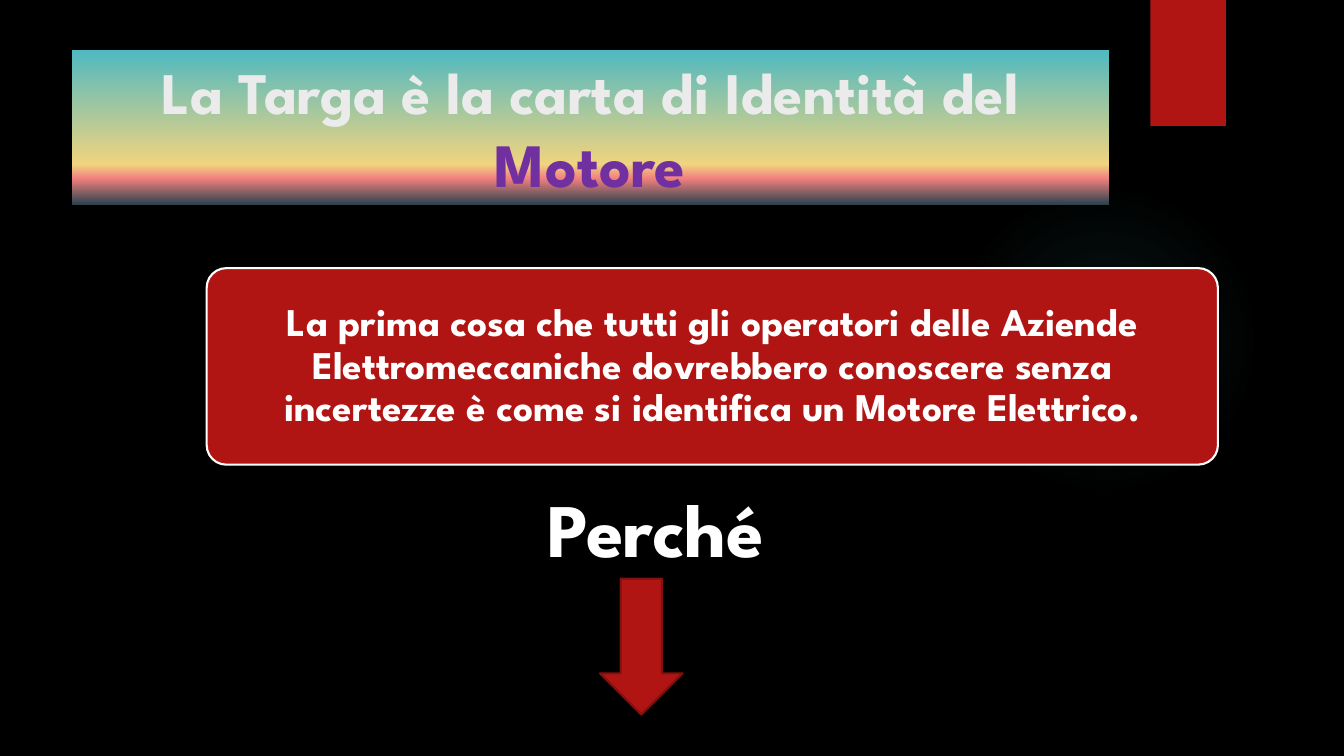
import lxml.etree
import pptx
import pptx.dml.color
import pptx.enum.shapes
import pptx.enum.text
import pptx.oxml.ns
import pptx.util

Inches = pptx.util.Inches
SHAPES = pptx.enum.shapes.MSO_SHAPE
ANCHORS = pptx.enum.text.MSO_ANCHOR
FONT = "League Spartan"
COLOURS = {
    "background": "000000", "red": "B01513", "dark red": "82100E",
    "white": "FFFFFF", "pale": "EBEBEB", "purple": "7030A0",
    "teal": "50B9C1", "yellow": "F0D47F", "coral": "F1817F", "slate": "2A424D",
}


def rgb(name):
    """Return the named colour."""
    return pptx.dml.color.RGBColor.from_string(COLOURS[name])


def apply(target, values):
    """Set each attribute in values on target."""
    for attribute, value in values.items():
        setattr(target, attribute, value)


def add_block(slide, kind, box, fill=None, line=None):
    """Add a flat preset shape with an optional fill and outline."""
    block = slide.shapes.add_shape(kind, *map(Inches, box))
    block.shadow.inherit = False
    if fill:
        block.fill.solid()
        block.fill.fore_color.rgb = rgb(fill)
    if line:
        block.line.color.rgb = rgb(line)
        block.line.width = pptx.util.Pt(1.5)
    else:
        block.line.fill.background()
    return block


def fill_gradient(block, stops, radial=False):
    """Fill a block with (position, colour, opacity) stops in percent."""
    tag = pptx.oxml.ns.qn
    gradient = lxml.etree.Element(tag("a:gradFill"), rotWithShape="1")
    stop_list = lxml.etree.SubElement(gradient, tag("a:gsLst"))
    for position, name, opacity in stops:
        stop = lxml.etree.SubElement(stop_list, tag("a:gs"), pos=str(position * 1000))
        colour = lxml.etree.SubElement(stop, tag("a:srgbClr"), val=COLOURS[name])
        if opacity < 100:
            lxml.etree.SubElement(colour, tag("a:alpha"), val=str(opacity * 1000))
    if radial:
        course = lxml.etree.SubElement(gradient, tag("a:path"), path="circle")
        lxml.etree.SubElement(course, tag("a:fillToRect"),
                              l="50000", t="50000", r="50000", b="50000")
    else:
        lxml.etree.SubElement(gradient, tag("a:lin"), ang="5400000", scaled="0")
    block._element.spPr.find(tag("a:prstGeom")).addnext(gradient)


def write(block, runs, anchor, inset=(0.1, 0.05), spacing=1.0):
    """Write centred bold (text, size, colour) runs into a block."""
    across, down = map(Inches, inset)
    frame = block.text_frame
    apply(frame, {"word_wrap": True, "vertical_anchor": anchor,
                  "margin_left": across, "margin_right": across,
                  "margin_top": down, "margin_bottom": down})
    paragraph = frame.paragraphs[0]
    apply(paragraph, {"alignment": pptx.enum.text.PP_ALIGN.CENTER,
                      "line_spacing": spacing})
    for text, size, colour in runs:
        run = paragraph.add_run()
        run.text = text
        apply(run.font, {"name": FONT, "size": pptx.util.Pt(size), "bold": True})
        run.font.color.rgb = rgb(colour)


def add_backdrop(slide, box):
    """Paint the background, the faint glow and the red tab at the top right."""
    left, top, width, height = box
    slide.background.fill.solid()
    slide.background.fill.fore_color.rgb = rgb("background")
    glow = add_block(slide, SHAPES.OVAL, (left + width - 3.92, top + 1.83, 3.08, 3.08))
    fill_gradient(glow, [(0, "teal", 7), (36, "teal", 6), (69, "teal", 0)], radial=True)
    add_block(slide, SHAPES.RECTANGLE, (left + width - 1.92, top, 0.75, 1.25), "red")


def add_title(slide, box):
    """Add the title on its gradient band."""
    band = add_block(slide, SHAPES.RECTANGLE, box)
    fill_gradient(band, [(0, "teal", 100), (74, "yellow", 100),
                         (83, "coral", 100), (100, "slate", 100)])
    write(band, [("La Targa è la carta di Identità del ", 42, "pale"),
                 ("Motore", 44, "purple")], ANCHORS.TOP)


def add_statement(slide, box):
    """Add the rounded red card with the main statement."""
    card = add_block(slide, SHAPES.ROUNDED_RECTANGLE, box, "red", "white")
    card.adjustments[0] = 0.1
    statement = ("La prima cosa che tutti gli operatori delle Aziende "
                 "Elettromeccaniche dovrebbero conoscere senza incertezze "
                 "è come si identifica un Motore Elettrico.")
    write(card, [(statement, 28, "white")], ANCHORS.MIDDLE, (0.15, 0.15), 0.9)


def add_question(slide, box):
    """Add the question with the arrow pointing down below it."""
    left, top, width, height = box
    question_height = 1.01
    question = slide.shapes.add_textbox(
        *map(Inches, (left, top, width, question_height)))
    write(question, [("Perché", 54, "white")], ANCHORS.TOP)
    add_block(slide, SHAPES.DOWN_ARROW,
              (left + 1.09, top + question_height, 0.82, height - question_height),
              "red", "dark red")


def main():
    """Build the slide and save it."""
    deck = pptx.Presentation()
    apply(deck, {"slide_width": Inches(13.33), "slide_height": Inches(7.5)})
    slide = deck.slides.add_slide(deck.slide_layouts[6])
    add_backdrop(slide, (0, 0, 13.33, 7.5))
    add_title(slide, (0.71, 0.5, 10.29, 1.53))
    add_statement(slide, (2.05, 2.66, 10.03, 1.95))
    add_question(slide, (4.86, 4.73, 3.29, 2.36))
    deck.save("out.pptx")


if __name__ == "__main__":
    main()
